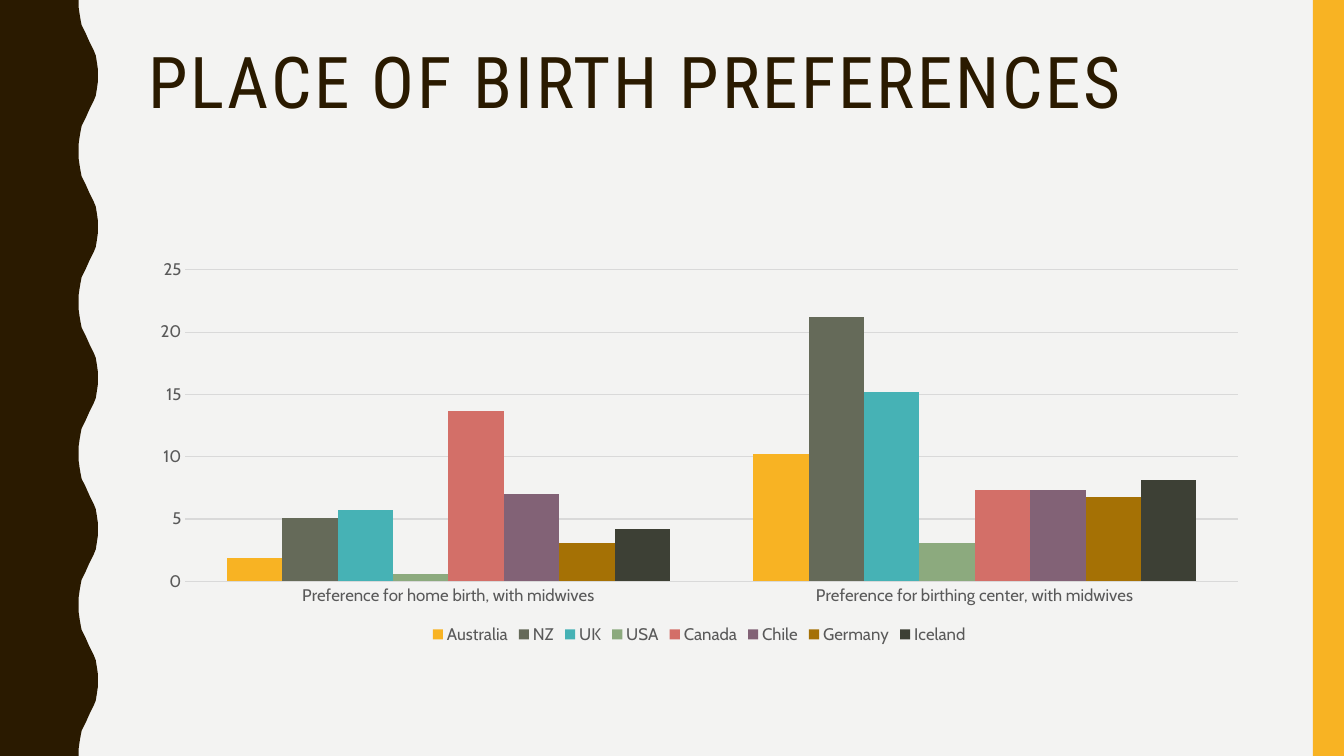
from dataclasses import dataclass

from pptx import Presentation
from pptx.chart.data import CategoryChartData
from pptx.dml.color import RGBColor
from pptx.enum.chart import XL_CHART_TYPE, XL_LEGEND_POSITION, XL_TICK_MARK
from pptx.enum.shapes import MSO_SHAPE
from pptx.enum.text import MSO_ANCHOR
from pptx.util import Inches, Pt

COLUMN_CLUSTERED = XL_CHART_TYPE.COLUMN_CLUSTERED
LEGEND_BOTTOM = XL_LEGEND_POSITION.BOTTOM
NO_TICK = XL_TICK_MARK.NONE
RECTANGLE = MSO_SHAPE.RECTANGLE
ANCHOR_TOP = MSO_ANCHOR.TOP

# The slide is a grid of 160 columns by 90 rows of square cells
COLUMNS, ROWS = 160, 90
SLIDE_WIDTH, SLIDE_HEIGHT = Inches(13.33), Inches(7.5)
CELL = SLIDE_HEIGHT / ROWS


@dataclass(frozen=True)
class Theme:
    background: str = "F3F3F2"
    dark: str = "2A1A00"
    accent: str = "F8B323"
    label: str = "595959"
    rule: str = "D9D9D9"
    title_font: str = "Roboto Condensed"
    body_font: str = "Cabin"
    title_size: int = 51
    title_tracking: int = 2
    label_size: int = 12
    rule_width: float = 0.75


# Half a wave of the left edge, as (column, row) from trough to crest
HALF_WAVE = [
    (9.36, 0), (9.36, 0.84), (9.48, 1.68), (9.6, 2.4), (9.72, 3),
    (9.96, 3.48), (10.2, 3.96), (10.44, 4.5), (10.68, 5.04), (10.92, 5.52),
    (11.16, 6), (11.4, 6.6), (11.52, 7.32), (11.64, 8.16), (11.64, 9),
]
WAVE_ROWS = 18

CATEGORIES = [
    "Preference for home birth, with midwives",
    "Preference for birthing center, with midwives",
]
COUNTRIES = [
    ("Australia", (1.9, 10.2), "F8B323"),
    ("NZ", (5.1, 21.2), "656A59"),
    ("UK", (5.7, 15.2), "46B2B5"),
    ("USA", (0.6, 3.1), "8CAA7E"),
    ("Canada", (13.7, 7.3), "D36F68"),
    ("Chile", (7, 7.3), "826276"),
    ("Germany", (3.1, 6.8), "A57105"),
    ("Iceland", (4.2, 8.1), "3D4035"),
]


def cells(*counts):
    """Turn counts of grid cells into lengths."""
    return [round(count * CELL) for count in counts]


def paint(fill, color):
    fill.solid()
    fill.fore_color.rgb = RGBColor.from_string(color)


class SlideBuilder:
    def __init__(self, slide, theme):
        self.slide = slide
        self.theme = theme
        paint(slide.background.fill, theme.background)

    def style_font(self, font, name, size, color):
        font.name = name
        font.size = Pt(size)
        font.color.rgb = RGBColor.from_string(color)

    def style_rule(self, line):
        line.color.rgb = RGBColor.from_string(self.theme.rule)
        line.width = Pt(self.theme.rule_width)

    def finish_shape(self, shape, color):
        shape.shadow.inherit = False
        paint(shape.fill, color)
        shape.line.fill.background()

    def wavy_band(self, color):
        mirrored = [(column, WAVE_ROWS - row) for column, row in reversed(HALF_WAVE[:-1])]
        wave = HALF_WAVE + mirrored
        edge = [(column, row + start)
                for start in range(0, ROWS, WAVE_ROWS) for column, row in wave]
        outline = self.slide.shapes.build_freeform(0, 0, scale=1.0)
        outline.add_line_segments([cells(*point) for point in edge + [(0, ROWS)]], close=True)
        self.finish_shape(outline.convert_to_shape(), color)

    def bar(self, column, row, width, height, color):
        shape = self.slide.shapes.add_shape(RECTANGLE, *cells(column, row, width, height))
        self.finish_shape(shape, color)

    def title(self, text, column, row, width, height):
        theme = self.theme
        box = self.slide.shapes.add_textbox(*cells(column, row, width, height))
        frame = box.text_frame
        frame.word_wrap = True
        frame.vertical_anchor = ANCHOR_TOP
        paragraph = frame.paragraphs[0]
        paragraph.line_spacing = 0.9
        self.style_font(paragraph.font, theme.title_font, theme.title_size, theme.dark)
        run = paragraph.add_run()
        run.text = text
        # Letter spacing is stored in hundredths of a point
        run._r.get_or_add_rPr().set("spc", str(theme.title_tracking * 100))

    def column_chart(self, categories, series_rows, column, row, width, height):
        theme = self.theme
        data = CategoryChartData()
        data.categories = categories
        for name, values, _ in series_rows:
            data.add_series(name, values)
        chart = self.slide.shapes.add_chart(
            COLUMN_CLUSTERED, *cells(column, row, width, height), data).chart
        self.style_font(chart.font, theme.body_font, theme.label_size, theme.label)
        chart.has_title = False

        # Columns
        plot = chart.plots[0]
        plot.vary_by_categories = False
        plot.gap_width = 150
        plot.overlap = 0
        for series, (_, _, color) in zip(plot.series, series_rows):
            paint(series.format.fill, color)
            series.invert_if_negative = False

        # Axes
        for axis in (chart.category_axis, chart.value_axis):
            axis.major_tick_mark = axis.minor_tick_mark = NO_TICK
        self.style_rule(chart.category_axis.format.line)
        value_axis = chart.value_axis
        value_axis.minimum_scale, value_axis.maximum_scale = 0, 25
        value_axis.major_unit = 5
        value_axis.format.line.fill.background()
        self.style_rule(value_axis.major_gridlines.format.line)

        # Legend
        chart.has_legend = True
        chart.legend.position = LEGEND_BOTTOM
        chart.legend.include_in_layout = False


def main():
    presentation = Presentation()
    presentation.slide_width = SLIDE_WIDTH
    presentation.slide_height = SLIDE_HEIGHT
    blank_layout = presentation.slide_layouts[6]
    theme = Theme()
    builder = SlideBuilder(presentation.slides.add_slide(blank_layout), theme)

    # Side decoration
    builder.wavy_band(theme.dark)
    builder.bar(156.25, 0, 3.75, ROWS, theme.accent)

    # Content, sharing one left edge and width
    left, width = 16.44, 133.56
    builder.title("PLACE OF BIRTH PREFERENCES", left, 5, width, 19.5)
    builder.column_chart(CATEGORIES, COUNTRIES, left, 30, width, 47.2)

    presentation.save("out.pptx")


if __name__ == "__main__":
    main()
